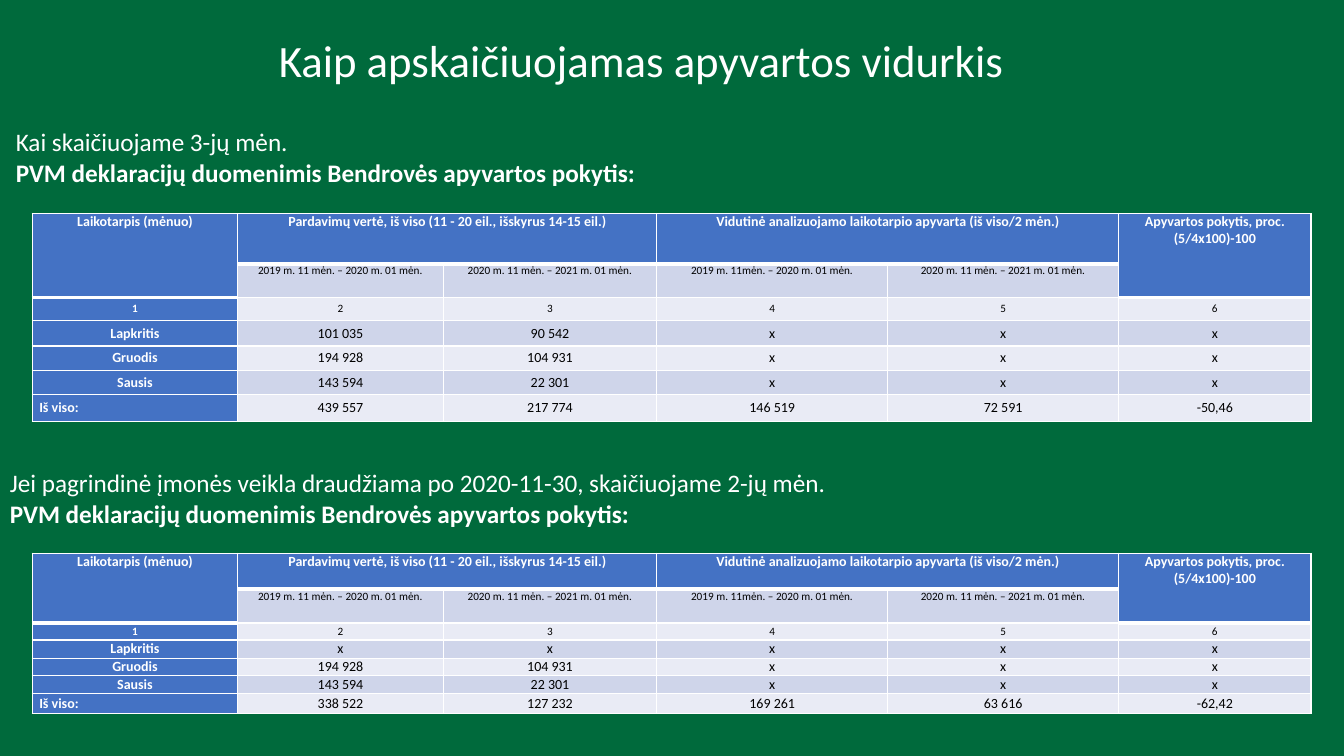
import dataclasses

import pptx
import pptx.dml.color
import pptx.enum.shapes
import pptx.enum.text
import pptx.oxml
import pptx.oxml.ns
import pptx.presentation
import pptx.shapes.autoshape
import pptx.slide
import pptx.table
import pptx.text.text
import pptx.util

Cm = pptx.util.Cm
Anchor = pptx.enum.text.MSO_ANCHOR
Align = pptx.enum.text.PP_ALIGN

FONT = "Calibri"
COLOURS = {
    "background": "006A3C",
    "header": "4472C4",
    "band_dark": "CFD5EA",
    "band_light": "E9EBF5",
    "light_text": "FFFFFF",
    "dark_text": "000000",
    "border": "FFFFFF",
}

COLUMN_WIDTHS = (5.18, 5.18, 5.38, 5.82, 5.82, 4.85)
TALL_HEADERS = (0, 5)
WIDE_HEADERS = (1, 3)
HEADINGS = [
    ["Laikotarpis (mėnuo)",
     "Pardavimų vertė, iš viso (11 - 20 eil., išskyrus 14-15 eil.)", "",
     "Vidutinė analizuojamo laikotarpio apyvarta (iš viso/2 mėn.)", "",
     "Apyvartos pokytis, proc. (5/4x100)-100"],
    ["", "2019 m. 11 mėn. – 2020 m. 01 mėn.", "2020 m. 11 mėn. – 2021 m. 01 mėn.",
     "2019 m. 11mėn. – 2020 m. 01 mėn.", "2020 m. 11 mėn. – 2021 m. 01 mėn.", ""],
    ["1", "2", "3", "4", "5", "6"],
]
NOVEMBER = ["Lapkritis", "101 035", "90 542", "x", "x", "x"]
NOVEMBER_LEFT_OUT = ["Lapkritis", "x", "x", "x", "x", "x"]
DECEMBER = ["Gruodis", "194 928", "104 931", "x", "x", "x"]
JANUARY = ["Sausis", "143 594", "22 301", "x", "x", "x"]


@dataclasses.dataclass
class TurnoverSection:
    condition: str
    caption_left: float
    caption_top: float
    table_top: float
    row_heights: tuple[float, ...]
    months: list[list[str]]
    totals: list[str]


SECTIONS = [
    TurnoverSection(
        "Kai skaičiuojame 3-jų mėn.", 0.15, 3.07, 5.38,
        (1.27, 0.81, 0.58, 0.64, 0.61, 0.61, 0.69),
        [NOVEMBER, DECEMBER, JANUARY],
        ["Iš viso:", "439 557", "217 774", "146 519", "72 591", "-50,46"]),
    TurnoverSection(
        "Jei pagrindinė įmonės veikla draudžiama po 2020-11-30, skaičiuojame 2-jų mėn.",
        0, 11.66, 13.94,
        (0.91, 0.58, 0.43, 0.46, 0.43, 0.46, 0.51),
        [NOVEMBER_LEFT_OUT, DECEMBER, JANUARY],
        ["Iš viso:", "338 522", "127 232", "169 261", "63 616", "-62,42"]),
]


def colour(name: str) -> pptx.dml.color.RGBColor:
    return pptx.dml.color.RGBColor.from_string(COLOURS[name])


def add_run(paragraph: pptx.text.text._Paragraph, text: str, size: float,
            text_colour: str = "light_text", bold: bool = False) -> None:
    run = paragraph.add_run()
    run.text = text
    run.font.name = FONT
    run.font.size = pptx.util.Pt(size)
    run.font.bold = bold
    run.font.color.rgb = colour(text_colour)


def set_borders(cell: pptx.table._Cell, row: int, column: int) -> None:
    """Thin white edges, with a thick one under each header block."""
    header_end = 2 if column in TALL_HEADERS else 1
    points = {
        "L": 1,
        "R": 1,
        "T": 3 if row == header_end else 1,
        "B": 3 if row == 0 or row + 1 == header_end else 1,
    }
    properties = cell._tc.get_or_add_tcPr()
    for side, weight in points.items():
        properties.append(pptx.oxml.parse_xml(
            f'<a:ln{side} {pptx.oxml.ns.nsdecls("a")} w="{pptx.util.Pt(weight)}">'
            f'<a:solidFill><a:srgbClr val="{COLOURS["border"]}"/></a:solidFill>'
            f'</a:ln{side}>'))


def fill_cell(cell: pptx.table._Cell, row: int, column: int, text: str) -> None:
    is_header = row == 0 or column == 0
    set_borders(cell, row, column)
    cell.fill.solid()
    band = "band_dark" if row % 2 else "band_light"
    cell.fill.fore_color.rgb = colour("header" if is_header else band)
    cell.margin_left = cell.margin_right = Cm(0.18)
    cell.margin_top = cell.margin_bottom = 0
    cell.vertical_anchor = Anchor.TOP if row < 2 else Anchor.MIDDLE
    if text:
        paragraph = cell.text_frame.paragraphs[0]
        is_total_label = row == len(HEADINGS) + 3 and column == 0
        paragraph.alignment = Align.LEFT if is_total_label else Align.CENTER
        add_run(paragraph, text, 8 if row in (1, 2) else 10,
                "light_text" if is_header else "dark_text", is_header)


def add_turnover_table(slide: pptx.slide.Slide, section: TurnoverSection) -> None:
    rows = HEADINGS + section.months + [section.totals]
    turnover = slide.shapes.add_table(
        len(rows), len(COLUMN_WIDTHS), Cm(0.81), Cm(section.table_top),
        Cm(sum(COLUMN_WIDTHS)), Cm(sum(section.row_heights))).table
    for column, width in zip(turnover.columns, COLUMN_WIDTHS):
        column.width = Cm(width)
    for row, height in zip(turnover.rows, section.row_heights):
        row.height = Cm(height)
    for column in TALL_HEADERS:
        turnover.cell(0, column).merge(turnover.cell(1, column))
    for column in WIDE_HEADERS:
        turnover.cell(0, column).merge(turnover.cell(0, column + 1))
    for row, texts in enumerate(rows):
        for column, text in enumerate(texts):
            fill_cell(turnover.cell(row, column), row, column, text)


def add_caption(slide: pptx.slide.Slide, section: TurnoverSection) -> None:
    caption = slide.shapes.add_textbox(
        Cm(section.caption_left), Cm(section.caption_top), Cm(31.62), Cm(1.8)).text_frame
    caption.word_wrap = True
    add_run(caption.paragraphs[0], section.condition, 18)
    add_run(caption.add_paragraph(),
            "PVM deklaracijų duomenimis Bendrovės apyvartos pokytis:", 18, bold=True)


def add_backdrop(deck: pptx.presentation.Presentation, slide: pptx.slide.Slide) -> None:
    backdrop = slide.shapes.add_shape(
        pptx.enum.shapes.MSO_SHAPE.RECTANGLE, 0, 0, deck.slide_width, deck.slide_height)
    backdrop.shadow.inherit = False
    backdrop.fill.solid()
    backdrop.fill.fore_color.rgb = colour("background")
    backdrop.line.fill.background()


def format_title(slide: pptx.slide.Slide) -> None:
    """Place the title placeholder in front of the backdrop."""
    heading = slide.shapes.title
    heading.left, heading.top, heading.width, heading.height = (
        Cm(0.48), Cm(0.69), Cm(31.62), Cm(1.63))
    frame = heading.text_frame
    frame.word_wrap = True
    frame.auto_size = pptx.enum.text.MSO_AUTO_SIZE.NONE
    frame.vertical_anchor = Anchor.TOP
    frame.paragraphs[0].alignment = Align.CENTER
    add_run(frame.paragraphs[0], "Kaip apskaičiuojamas apyvartos vidurkis ", 32)
    heading.element.getparent().append(heading.element)


def main() -> None:
    deck = pptx.Presentation()
    deck.slide_width, deck.slide_height = Cm(33.87), Cm(19.05)
    slide = deck.slides.add_slide(deck.slide_layouts.get_by_name("Title Only"))
    add_backdrop(deck, slide)
    for section in SECTIONS:
        add_caption(slide, section)
        add_turnover_table(slide, section)
    format_title(slide)
    deck.save("out.pptx")


if __name__ == "__main__":
    main()
